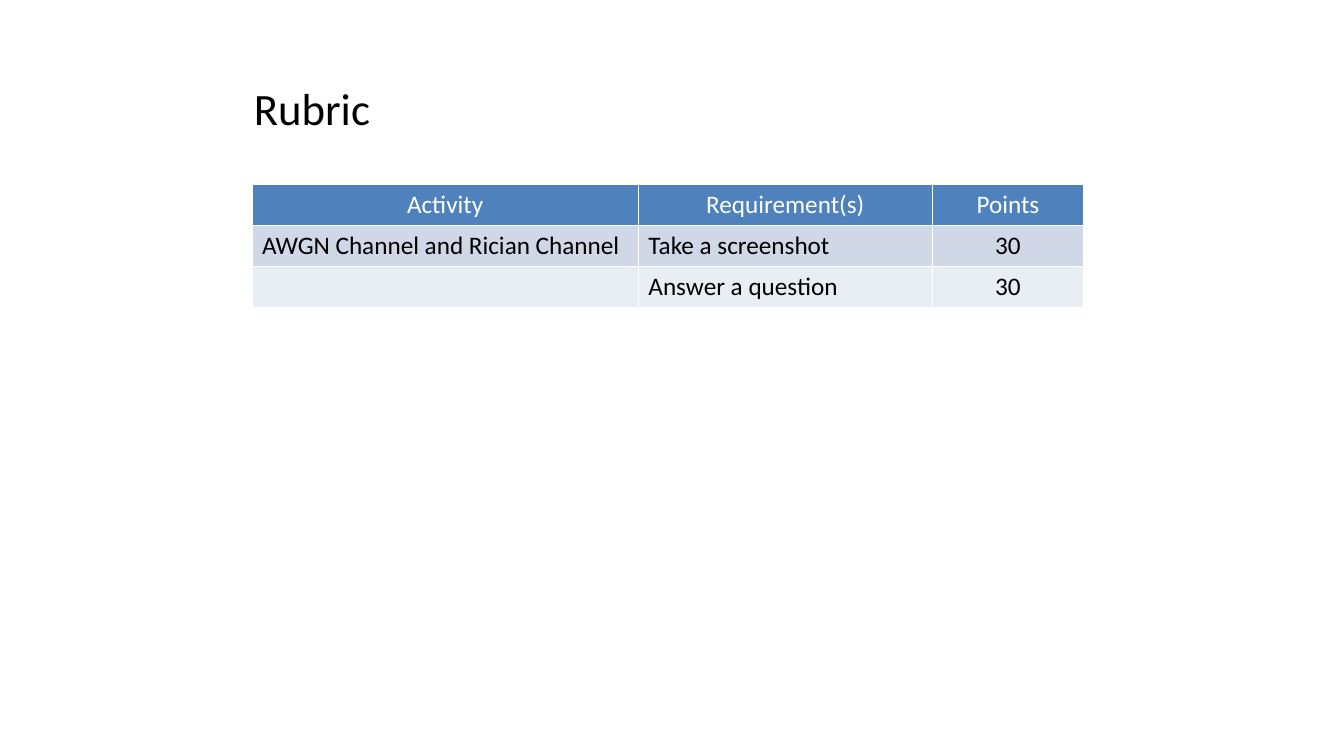
from dataclasses import dataclass

from pptx import Presentation
from pptx.dml.color import RGBColor
from pptx.enum import text
from pptx.util import Pt

FONT = "Calibri"
HEADER_FILL = "4F81BD"
BAND_FILLS = ("D0D8E8", "E9EDF4")
BLACK, WHITE = "000000", "FFFFFF"
ROW_HEIGHT = 29.2


@dataclass
class Column:
    heading: str
    width: float
    entries: tuple[str, ...]
    align: text.PP_ALIGN = text.PP_ALIGN.LEFT


COLUMNS = (
    Column("Activity", 276, ("AWGN Channel and Rician Channel", "")),
    Column("Requirement(s)", 210, ("Take a screenshot", "Answer a question")),
    Column("Points", 108, ("30", "30"), text.PP_ALIGN.CENTER),
)


def color(value: str) -> RGBColor:
    return RGBColor.from_string(value)


def style_font(font, size: float, value: str) -> None:
    font.name = FONT
    font.size = Pt(size)
    font.bold = False
    font.color.rgb = color(value)


def add_title(slide, title: str) -> None:
    box = slide.shapes.add_textbox(Pt(174.25), Pt(54), Pt(648), Pt(356.4))
    frame = box.text_frame
    frame.word_wrap = True
    frame.text = title
    style_font(frame.paragraphs[0].runs[0].font, 32, BLACK)


def fill_cell(cell, words: str, fill: str, ink: str, align: text.PP_ALIGN) -> None:
    cell.fill.solid()
    cell.fill.fore_color.rgb = color(fill)
    cell.text_frame.text = words
    para = cell.text_frame.paragraphs[0]
    para.alignment = align
    # The paragraph font also sizes the empty cell
    for item in (para, *para.runs):
        style_font(item.font, 18, ink)


def add_rubric(slide, columns: tuple[Column, ...]) -> None:
    row_count = 1 + len(columns[0].entries)
    width = sum(column.width for column in columns)
    frame = slide.shapes.add_table(row_count, len(columns), Pt(180), Pt(132),
                                   Pt(width), Pt(ROW_HEIGHT * row_count))
    table = frame.table
    for row in table.rows:
        row.height = Pt(ROW_HEIGHT)
    for index, column in enumerate(columns):
        table.columns[index].width = Pt(column.width)
        fill_cell(table.cell(0, index), column.heading, HEADER_FILL, WHITE,
                  text.PP_ALIGN.CENTER)
        for row_index, entry in enumerate(column.entries):
            band = BAND_FILLS[row_index % len(BAND_FILLS)]
            fill_cell(table.cell(row_index + 1, index), entry, band, BLACK,
                      column.align)


def main() -> None:
    deck = Presentation()
    deck.slide_width, deck.slide_height = Pt(960), Pt(540)
    slide = deck.slides.add_slide(deck.slide_layouts[6])
    add_title(slide, "Rubric")
    add_rubric(slide, COLUMNS)
    deck.save("out.pptx")


if __name__ == "__main__":
    main()
